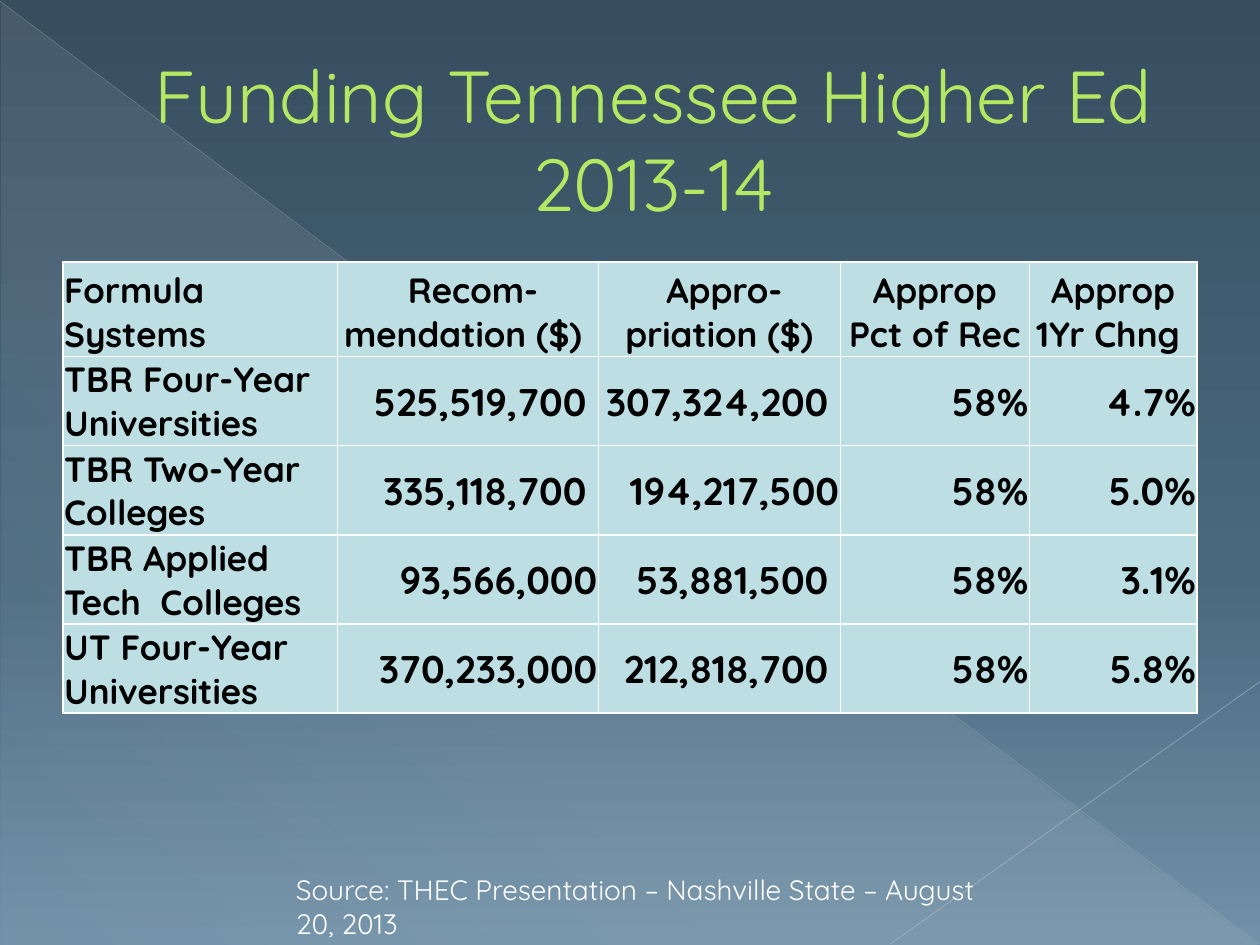
import pptx
import pptx.util
import pptx.dml.color
import pptx.enum.shapes
import pptx.enum.text
import pptx.oxml
import pptx.oxml.ns

Inches = pptx.util.Inches
Pt = pptx.util.Pt
Align = pptx.enum.text.PP_ALIGN
Anchor = pptx.enum.text.MSO_ANCHOR
qn = pptx.oxml.ns.qn

TITLE = "Funding Tennessee Higher Ed\v2013-14"
SOURCE = "Source: THEC Presentation – Nashville State – August 20, 2013"
HEADER = ["Formula Systems", " Recom-mendation ($) ", " Appro-priation ($)",
          "Approp Pct of Rec", "Approp 1Yr Chng "]
ROWS = [
    ["TBR Four-Year Universities", "525,519,700 ", "307,324,200 ", "58%", "4.7%"],
    ["TBR Two-Year Colleges", "335,118,700 ", "194,217,500", "58%", "5.0%"],
    ["TBR Applied Tech  Colleges", "93,566,000", "53,881,500 ", "58%", "3.1%"],
    ["UT Four-Year Universities", "370,233,000", "212,818,700 ", "58%", "5.8%"],
]
COLUMN_WIDTHS = [2.18, 2.07, 1.92, 1.5, 1.33]
HEADER_HEIGHT, ROW_HEIGHT = 0.75, 0.68
DIAGONALS = [
    ((0, 0.01), (9.99, 7.49), "BAC0C6", 0.39, 35),
    ((10, 5.41), (7.07, 7.49), "C2C7CC", 0.47, 45),
]
THEME = {
    "font": "Quicksand",
    "title": "B4E862", "title_outline": "698A18", "cell": "BDDFE3",
    "border": "FFFFFF", "dark": "000000", "light": "FFFFFF",
    "title_size": 42, "label_size": 20, "number_size": 22, "source_size": 16,
    "background": [(0, "374E5F", 100), (60, "49687E", 100), (100, "7291A8", 100)],
    "triangle": [(0, "E7ECED", 10), (70, "E7ECED", 8), (100, "E7ECED", 1)],
}


def add_element(parent, tag, **attributes):
    element = parent.makeelement(qn(tag), {k: str(v) for k, v in attributes.items()})
    parent.append(element)
    return element


def add_color(parent, color, opacity=100):
    element = add_element(parent, "a:srgbClr", val=color)
    if opacity < 100:
        add_element(element, "a:alpha", val=opacity * 1000)


def set_gradient(fill, owner, stops, angle):
    fill.gradient()
    gradient = owner.find(".//" + qn("a:gradFill"))
    for child in list(gradient):
        gradient.remove(child)
    stop_list = add_element(gradient, "a:gsLst")
    for position, color, opacity in stops:
        add_color(add_element(stop_list, "a:gs", pos=position * 1000), color, opacity)
    add_element(gradient, "a:lin", ang=angle * 60000, scaled=0)


def write_text(frame, text, size, color, bold=False, align=Align.LEFT):
    frame.word_wrap = True
    paragraph = frame.paragraphs[0]
    paragraph.text = text
    paragraph.alignment = align
    for run in paragraph.runs:
        run.font.name = THEME["font"]
        run.font.size = Pt(size)
        run.font.bold = bold
        run.font.color.rgb = pptx.dml.color.RGBColor.from_string(color)
    return paragraph


def add_background(slide):
    set_gradient(slide.background.fill, slide.element, THEME["background"], 90)
    triangle = slide.shapes.add_shape(
        pptx.enum.shapes.MSO_SHAPE.RIGHT_TRIANGLE,
        Inches(0.01), Inches(0.02), Inches(9.98), Inches(7.48))
    triangle.shadow.inherit = False
    triangle.line.fill.background()
    set_gradient(triangle.fill, triangle.element, THEME["triangle"], 133)
    for start, end, color, width, opacity in DIAGONALS:
        line = slide.shapes.add_connector(
            pptx.enum.shapes.MSO_CONNECTOR.STRAIGHT,
            *[Inches(value) for value in start + end])
        line.line.width = Pt(width)
        line.line.color.rgb = pptx.dml.color.RGBColor.from_string(color)
        color_element = line.element.spPr.find(".//" + qn("a:srgbClr"))
        add_element(color_element, "a:alpha", val=opacity * 1000)
        add_element(line.element.spPr, "a:effectLst")


def add_title(slide):
    title = slide.shapes.title
    slide.shapes.element.append(title.element)
    title.left, title.top = Inches(0.42), Inches(0.33)
    title.width, title.height = Inches(9), Inches(1.53)
    frame = title.text_frame
    frame.vertical_anchor = Anchor.MIDDLE
    paragraph = write_text(frame, TITLE, THEME["title_size"], THEME["title"],
                           align=Align.CENTER)
    frame.auto_size = pptx.enum.text.MSO_AUTO_SIZE.TEXT_TO_FIT_SHAPE
    properties = paragraph._p.get_or_add_pPr()
    properties.set("marL", str(Inches(0.53)))
    properties.set("indent", "0")
    for run in paragraph.runs:
        run_properties = run._r.get_or_add_rPr()
        outline = add_element(run_properties, "a:ln", w=Pt(0.5))
        add_color(add_element(outline, "a:solidFill"), THEME["title_outline"])
        run_properties.insert(0, outline)


def format_cell(cell, text, is_header, is_label):
    cell.margin_left = cell.margin_top = cell.margin_right = Inches(0.01)
    cell.margin_bottom = 0
    cell.vertical_anchor = Anchor.BOTTOM if is_header else Anchor.MIDDLE
    align = Align.LEFT if is_label else Align.CENTER if is_header else Align.RIGHT
    size = THEME["label_size" if is_header or is_label else "number_size"]
    write_text(cell.text_frame, text, size, THEME["dark"], bold=True, align=align)
    properties = cell._tc.get_or_add_tcPr()
    for side in ("a:lnL", "a:lnR", "a:lnT", "a:lnB"):
        border = add_element(properties, side, w=Pt(1))
        add_color(add_element(border, "a:solidFill"), THEME["border"])
    cell.fill.solid()
    cell.fill.fore_color.rgb = pptx.dml.color.RGBColor.from_string(THEME["cell"])


def add_funding_table(slide):
    heights = [HEADER_HEIGHT] + [ROW_HEIGHT] * len(ROWS)
    table = slide.shapes.add_table(
        len(heights), len(HEADER), Inches(0.5), Inches(2.08),
        Inches(sum(COLUMN_WIDTHS)), Inches(sum(heights))).table
    table.horz_banding = False
    table.first_row = False
    for column, width in zip(table.columns, COLUMN_WIDTHS):
        column.width = Inches(width)
    for row, height in zip(table.rows, heights):
        row.height = Inches(height)
    for row_index, values in enumerate([HEADER] + ROWS):
        for column_index, text in enumerate(values):
            format_cell(table.cell(row_index, column_index), text,
                        row_index == 0, column_index == 0)


def main():
    presentation = pptx.Presentation()
    presentation.slide_width, presentation.slide_height = Inches(10), Inches(7.5)
    slide = presentation.slides.add_slide(presentation.slide_layouts[5])
    add_background(slide)
    add_title(slide)
    add_funding_table(slide)
    source = slide.shapes.add_textbox(Inches(2.25), Inches(6.88), Inches(5.86), Inches(0.37))
    write_text(source.text_frame, SOURCE, THEME["source_size"], THEME["light"])
    presentation.save("out.pptx")


if __name__ == "__main__":
    main()
